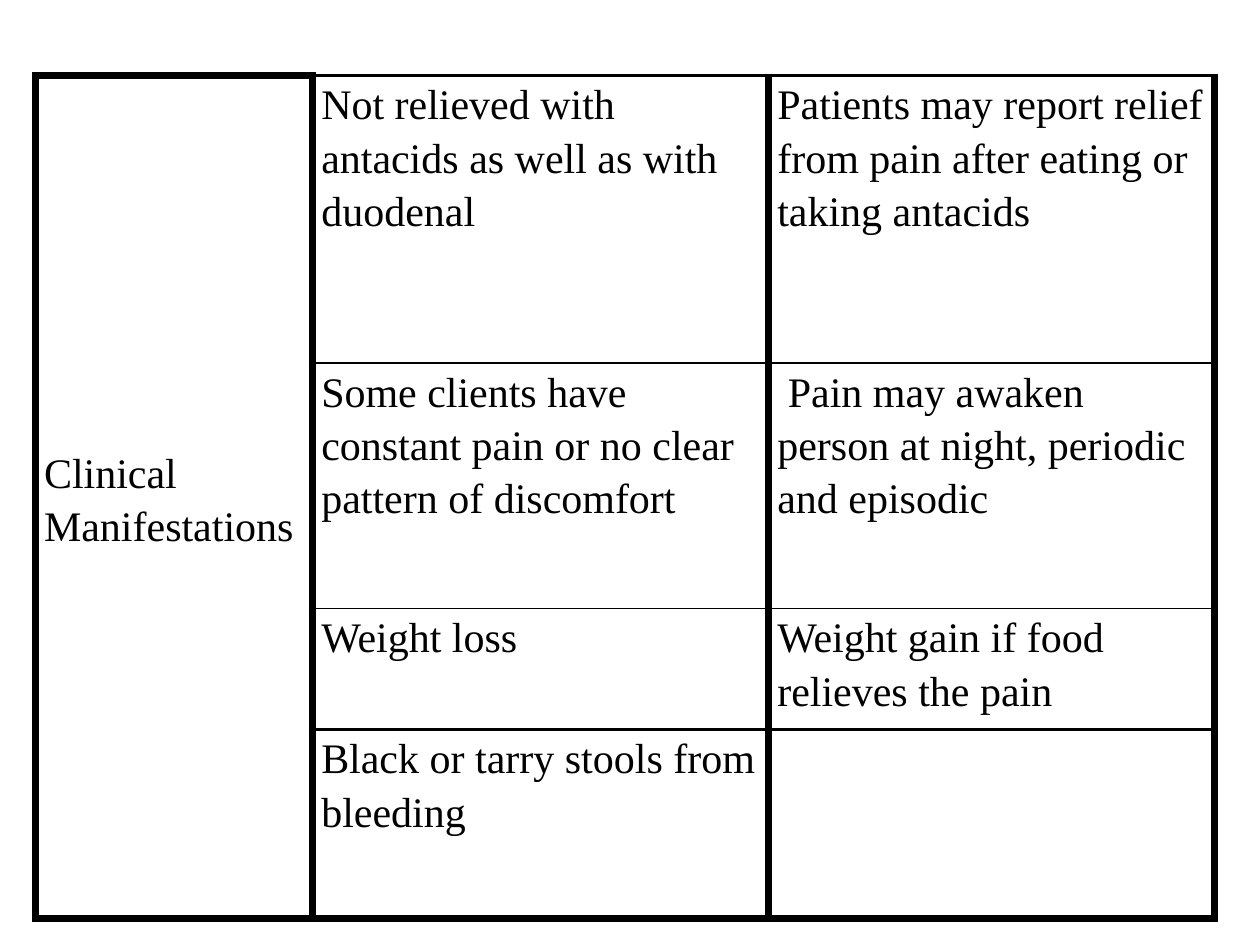
import pptx
import pptx.dml.color
import pptx.enum.text
import pptx.oxml
import pptx.oxml.ns
import pptx.util
from pptx.util import Inches

HUES = {"ink": "000000"}
COLS = [2.2, 3.62, 3.54]
ROWS = [2.28, 1.95, 0.96, 1.5]
HEAD = "Clinical Manifestations"
SIGNS = [
    ("Not relieved with antacids as well as with duodenal",
     "Patients may report relief from pain after eating or taking antacids"),
    ("Some clients have constant pain or no clear pattern of discomfort",
     " Pain may awaken person at night, periodic and episodic"),
    ("Weight loss", "Weight gain if food relieves the pain"),
    ("Black or tarry stools from bleeding", ""),
]
THICK = 4.5
RULES = [1.5, 1.5, 1, 1.5, THICK]  # line above each row, then the last line


class Deck:
    font = "Times New Roman"
    size = 24

    def __init__(self, slide):
        self.slide = slide

    def grid(self, left, top, cols, rows):
        table = self.slide.shapes.add_table(
            len(rows), len(cols), Inches(left), Inches(top),
            Inches(sum(cols)), Inches(sum(rows))).table
        table.first_row = table.horz_banding = False
        for col, wide in zip(table.columns, cols):
            col.width = Inches(wide)
        for row, high in zip(table.rows, rows):
            row.height = Inches(high)
        return table

    def edge(self, cell, **sides):
        """Draw the cell's borders, given in the order L, R, T, B."""
        props = cell._tc.get_or_add_tcPr()
        for side, width in sides.items():
            props.append(pptx.oxml.parse_xml(
                f'<a:ln{side} {pptx.oxml.ns.nsdecls("a")} '
                f'w="{pptx.util.Pt(width)}"><a:solidFill>'
                f'<a:srgbClr val="{HUES["ink"]}"/></a:solidFill></a:ln{side}>'))
        cell.fill.background()

    def text(self, cell, words):
        cell.margin_left = cell.margin_right = Inches(0.07)
        cell.margin_top = cell.margin_bottom = 0
        para = cell.text_frame.paragraphs[0]
        para.line_spacing = 1.15
        if words:
            run = para.add_run()
            run.text = words
            run.font.name = self.font
            run.font.size = pptx.util.Pt(self.size)
            run.font.color.rgb = pptx.dml.color.RGBColor.from_string(HUES["ink"])


def main():
    show = pptx.Presentation()
    show.slide_width, show.slide_height = Inches(10), Inches(7.5)
    deck = Deck(show.slides.add_slide(show.slide_layouts[6]))
    table = deck.grid(0.28, 0.6, COLS, ROWS)

    # Heading down the left side
    head = table.cell(0, 0)
    head.merge(table.cell(len(ROWS) - 1, 0))
    head.vertical_anchor = pptx.enum.text.MSO_ANCHOR.MIDDLE
    deck.text(head, HEAD)

    # Signs, row by row
    for r, pair in enumerate(SIGNS):
        deck.edge(table.cell(r, 0), L=THICK, R=THICK, T=THICK, B=THICK)
        for c, words in enumerate(pair, 1):
            cell = table.cell(r, c)
            deck.text(cell, words)
            deck.edge(cell, L=THICK, R=THICK, T=RULES[r], B=RULES[r + 1])

    show.save("out.pptx")


if __name__ == "__main__":
    main()
